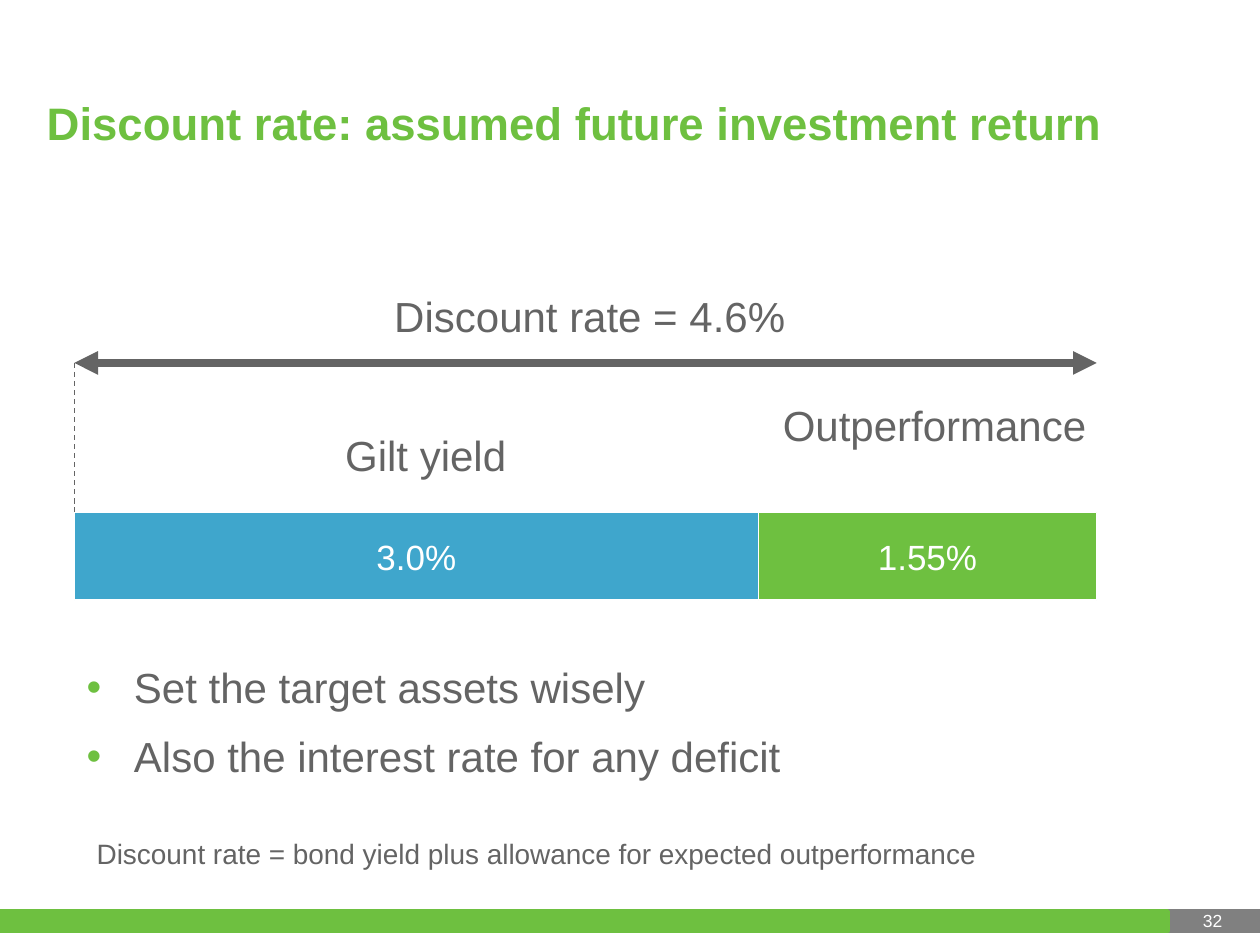
from lxml.etree import SubElement
from pptx import Presentation
from pptx.dml.color import RGBColor
from pptx.enum.dml import MSO_LINE_DASH_STYLE as Dash
from pptx.enum.shapes import MSO_CONNECTOR as Connector, MSO_SHAPE as Shape
from pptx.enum.text import MSO_ANCHOR as Anchor, PP_ALIGN as Align
from pptx.oxml.ns import qn
from pptx.util import Pt

COLOURS = {
    "green": "6EC040",
    "blue": "3FA6CC",
    "text": "646464",
    "footer": "808080",
    "white": "FFFFFF",
}


def rgb(name):
    return RGBColor.from_string(COLOURS[name])


class SlideBuilder:
    font = "Arial"

    def __init__(self, slide):
        self.slide = slide

    def add_text(self, paragraph, text, size, colour, align=Align.LEFT, bold=False):
        paragraph.alignment = align
        run = paragraph.add_run()
        run.text = text
        run.font.name = self.font
        run.font.size = Pt(size)
        run.font.bold = bold
        run.font.color.rgb = rgb(colour)

    def title(self, text, left, top, width, height):
        title = self.slide.shapes.title
        title.left, title.top = Pt(left), Pt(top)
        title.width, title.height = Pt(width), Pt(height)
        frame = title.text_frame
        frame.vertical_anchor = Anchor.MIDDLE
        self.add_text(frame.paragraphs[0], text, 26, "green", bold=True)

    def label(self, text, left, top, width, height, size=24, colour="text",
              align=Align.LEFT, anchor=Anchor.TOP):
        frame = self.slide.shapes.add_textbox(
            Pt(left), Pt(top), Pt(width), Pt(height)).text_frame
        frame.word_wrap = False
        frame.vertical_anchor = anchor
        self.add_text(frame.paragraphs[0], text, size, colour, align)

    def bar(self, left, top, width, height, fill, line, line_width, text=None):
        bar = self.slide.shapes.add_shape(
            Shape.RECTANGLE, Pt(left), Pt(top), Pt(width), Pt(height))
        bar.shadow.inherit = False
        bar.fill.solid()
        bar.fill.fore_color.rgb = rgb(fill)
        bar.line.color.rgb = rgb(line)
        bar.line.width = Pt(line_width)
        if text:
            frame = bar.text_frame
            frame.word_wrap = False
            frame.vertical_anchor = Anchor.MIDDLE
            self.add_text(frame.paragraphs[0], text, 20, "white", Align.CENTER)

    def line(self, x1, y1, x2, y2, width, dash=None, arrows=False):
        connector = self.slide.shapes.add_connector(
            Connector.STRAIGHT, Pt(x1), Pt(y1), Pt(x2), Pt(y2))
        connector.line.color.rgb = rgb("text")
        connector.line.width = Pt(width)
        if dash:
            connector.line.dash_style = dash
        properties = connector._element.spPr
        if arrows:
            outline = properties.find(qn("a:ln"))
            for end in ("a:headEnd", "a:tailEnd"):
                SubElement(outline, qn(end), type="triangle")
        SubElement(properties, qn("a:effectLst"))

    def bullets(self, items, left, top, width, height, indent=27):
        frame = self.slide.shapes.add_textbox(
            Pt(left), Pt(top), Pt(width), Pt(height)).text_frame
        frame.word_wrap = True
        for index, item in enumerate(items):
            paragraph = frame.add_paragraph() if index else frame.paragraphs[0]
            paragraph.space_after = Pt(10.7)
            properties = paragraph._p.get_or_add_pPr()
            properties.set("marL", str(Pt(indent)))
            properties.set("indent", str(-Pt(indent)))
            bullet_colour = SubElement(properties, qn("a:buClr"))
            SubElement(bullet_colour, qn("a:srgbClr"), val=COLOURS["green"])
            SubElement(properties, qn("a:buFont"), typeface=self.font)
            SubElement(properties, qn("a:buChar"), char="•")
            self.add_text(paragraph, item, 24, "text")


def main():
    deck = Presentation()
    deck.slide_width, deck.slide_height = Pt(720), Pt(540)
    page = SlideBuilder(deck.slides.add_slide(deck.slide_layouts[5]))

    footer_top, footer_height = 520.6, 11.5
    page.bar(660, footer_top, 60, footer_height, "footer", "footer", 2)
    page.bar(0, footer_top, 667.5, footer_height, "green", "green", 2)
    page.label("32", 659.5, 493.2, 46, 42.5, 10, "white", Align.RIGHT, Anchor.BOTTOM)

    page.title("Discount rate: assumed future investment return", 19.5, 31.7, 672.5, 76.3)

    left, right, split = 42.5, 626.7, 433.4
    arrow_top, bar_top, bar_height = 207.4, 292.7, 50.3
    page.label("Gilt yield", 190, 242, 106.5, 36, align=Align.CENTER)
    page.label("Outperformance", 439, 225, 190, 36, align=Align.CENTER)
    page.label("Discount rate = bond yield plus allowance for expected outperformance",
               48.2, 474.5, 518.4, 26.6, 16)
    page.label("Discount rate = 4.6%", 218.2, 162.3, 240.5, 36)
    page.line(left, arrow_top, right, arrow_top, 4.5, arrows=True)
    page.line(left, arrow_top, left, 298, 0.75, Dash.DASH)
    page.bar(left, bar_top, split - left, bar_height, "blue", "white", 0.75, "3.0%")
    page.bar(split, bar_top, right - split, bar_height, "green", "white", 0.75, "1.55%")

    page.bullets(["Set the target assets wisely", "Also the interest rate for any deficit"],
                 left, 374.5, 648, 96.5)
    deck.save("out.pptx")


if __name__ == "__main__":
    main()
